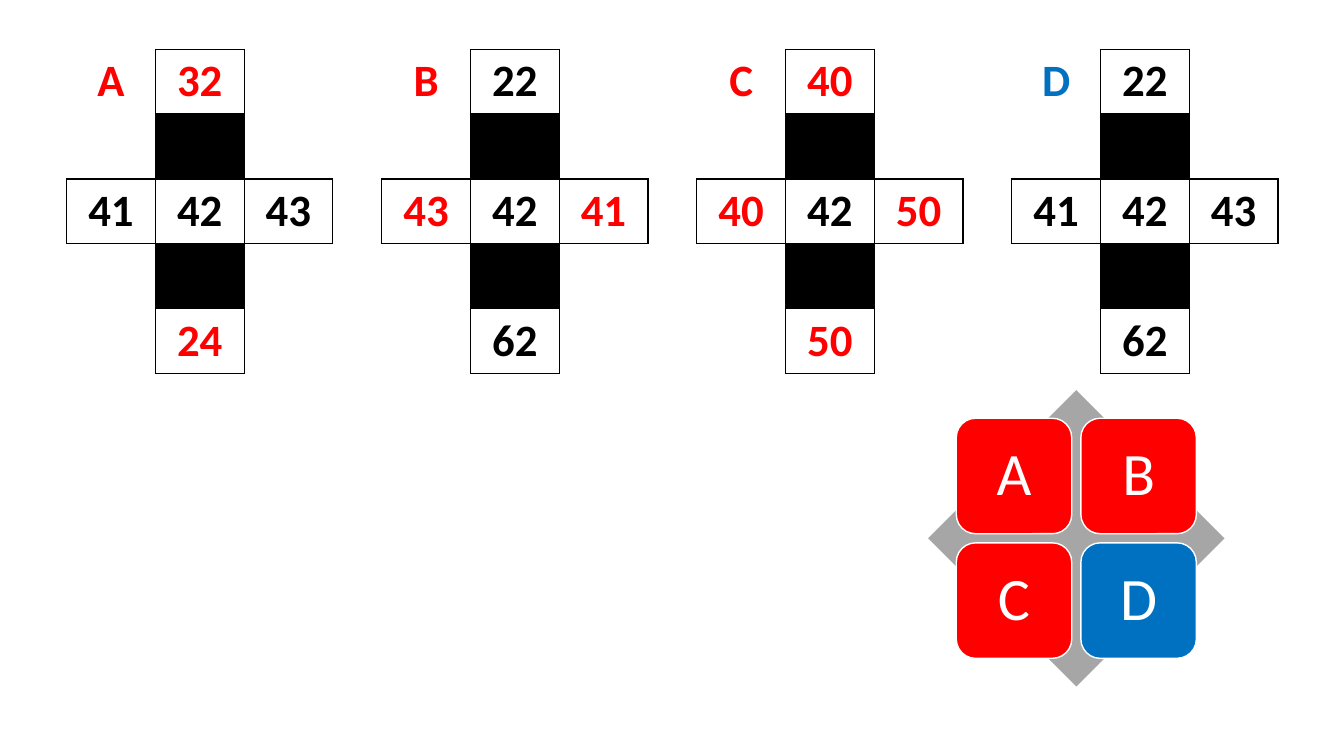
import dataclasses

import lxml.etree
import pptx
import pptx.dml.color
import pptx.enum.shapes
import pptx.enum.text
import pptx.oxml.ns
import pptx.util

Cm = pptx.util.Cm
Pt = pptx.util.Pt
RGB = pptx.dml.color.RGBColor.from_string
MIDDLE = pptx.enum.text.MSO_ANCHOR.MIDDLE
CENTER = pptx.enum.text.PP_ALIGN.CENTER
SHAPES = pptx.enum.shapes.MSO_SHAPE


@dataclasses.dataclass(frozen=True)
class Theme:
    font: str = "Calibri"
    ink: str = "000000"
    paper: str = "FFFFFF"
    wrong: str = "FF0000"
    right: str = "0070C0"
    backdrop: str = "A6A6A6"
    number_size: int = 32
    option_size: int = 43
    line_width: int = 1


THEME = Theme()


@dataclasses.dataclass(frozen=True)
class Box:
    left: float
    top: float
    width: float
    height: float

    def lengths(self):
        return [Cm(round(n, 2)) for n in dataclasses.astuple(self)]


@dataclasses.dataclass(frozen=True)
class Option:
    letter: str
    cross: dict
    wrong_numbers: tuple = ()

    @property
    def color(self):
        return THEME.wrong if self.wrong_numbers else THEME.right


def cross_of(top, left, middle, right, bottom):
    return {(0, 1): top, (1, 1): "", (2, 0): left, (2, 1): middle,
            (2, 2): right, (3, 1): "", (4, 1): bottom}


OPTIONS = [
    Option("A", cross_of("32", "41", "42", "43", "24"), ("32", "24")),
    Option("B", cross_of("22", "43", "42", "41", "62"), ("43", "41")),
    Option("C", cross_of("40", "40", "42", "50", "50"), ("40", "50")),
    Option("D", cross_of("22", "41", "42", "43", "62")),
]
EDGES = {"a:lnL": (0, -1), "a:lnR": (0, 1), "a:lnT": (-1, 0), "a:lnB": (1, 0)}


def write(text_frame, text, size, color, bold):
    paragraph = text_frame.paragraphs[0]
    paragraph.alignment = CENTER
    letters = paragraph.add_run()
    letters.text = text
    font_format = {"name": THEME.font, "size": Pt(size), "bold": bold}
    for attribute, value in font_format.items():
        setattr(letters.font, attribute, value)
    letters.font.color.rgb = RGB(color)
    return paragraph


def draw_edge(cell, edge, visible):
    qn = pptx.oxml.ns.qn
    properties = cell._tc.get_or_add_tcPr()
    line = lxml.etree.SubElement(properties, qn(edge), w=str(Pt(THEME.line_width)))
    if visible:
        ink = lxml.etree.SubElement(line, qn("a:solidFill"))
        lxml.etree.SubElement(ink, qn("a:srgbClr"), val=THEME.ink)
    else:
        lxml.etree.SubElement(line, qn("a:noFill"))


def fill_cell(cell, place, option):
    row, column = place
    cell.vertical_anchor = MIDDLE
    for edge, (down, across) in EDGES.items():
        neighbour = (row + down, column + across)
        draw_edge(cell, edge, place in option.cross or neighbour in option.cross)
    number = option.cross.get(place)
    if number == "":
        cell.fill.solid()
        cell.fill.fore_color.rgb = RGB(THEME.ink)
    else:
        cell.fill.background()
    if place == (0, 0):
        write(cell.text_frame, option.letter, THEME.number_size, option.color, True)
    elif number:
        color = THEME.wrong if number in option.wrong_numbers else THEME.ink
        write(cell.text_frame, number, THEME.number_size, color, True)


def add_cross(slide, box, option):
    grid = slide.shapes.add_table(5, 3, *box.lengths()).table
    for flag, value in {"first_row": False, "horz_banding": False}.items():
        setattr(grid, flag, value)
    for column in grid.columns:
        column.width = Cm(box.width / 3)
    for row in grid.rows:
        row.height = Cm(box.height / 5)
    for row in range(5):
        for column in range(3):
            fill_cell(grid.cell(row, column), (row, column), option)


def add_block(group, kind, box, color):
    block = group.shapes.add_shape(kind, *box.lengths())
    block.shadow.inherit = False
    block.fill.solid()
    block.fill.fore_color.rgb = RGB(color)
    return block


def add_answer_matrix(slide, box):
    group = slide.shapes.add_group_shape()
    diamond = add_block(group, SHAPES.DIAMOND, box, THEME.backdrop)
    diamond.line.fill.background()
    tile_size, margin, pitch = (box.width * share for share in (0.39, 0.095, 0.42))
    for index, option in enumerate(OPTIONS):
        row, column = divmod(index, 2)
        tile_box = Box(box.left + margin + column * pitch,
                       box.top + margin + row * pitch, tile_size, tile_size)
        tile = add_block(group, SHAPES.ROUNDED_RECTANGLE, tile_box, option.color)
        tile.line.color.rgb = RGB(THEME.paper)
        tile.line.width = Pt(THEME.line_width)
        frame_format = {"vertical_anchor": MIDDLE, "word_wrap": True}
        for side in ("left", "top", "right", "bottom"):
            frame_format["margin_" + side] = Cm(0.46)
        for attribute, value in frame_format.items():
            setattr(tile.text_frame, attribute, value)
        label = write(tile.text_frame, option.letter, THEME.option_size, THEME.paper, False)
        label.line_spacing = 0.9


def main():
    deck = pptx.Presentation()
    deck.slide_width, deck.slide_height = Cm(33.87), Cm(19.05)
    slide = deck.slides.add_slide(deck.slide_layouts[6])
    add_answer_matrix(slide, Box(23.39, 9.83, 7.47, 7.47))
    for index, option in enumerate(OPTIONS):
        add_cross(slide, Box(1.68 + index * 7.94, 1.24, 6.71, 8.17), option)
    deck.save("out.pptx")


if __name__ == "__main__":
    main()
